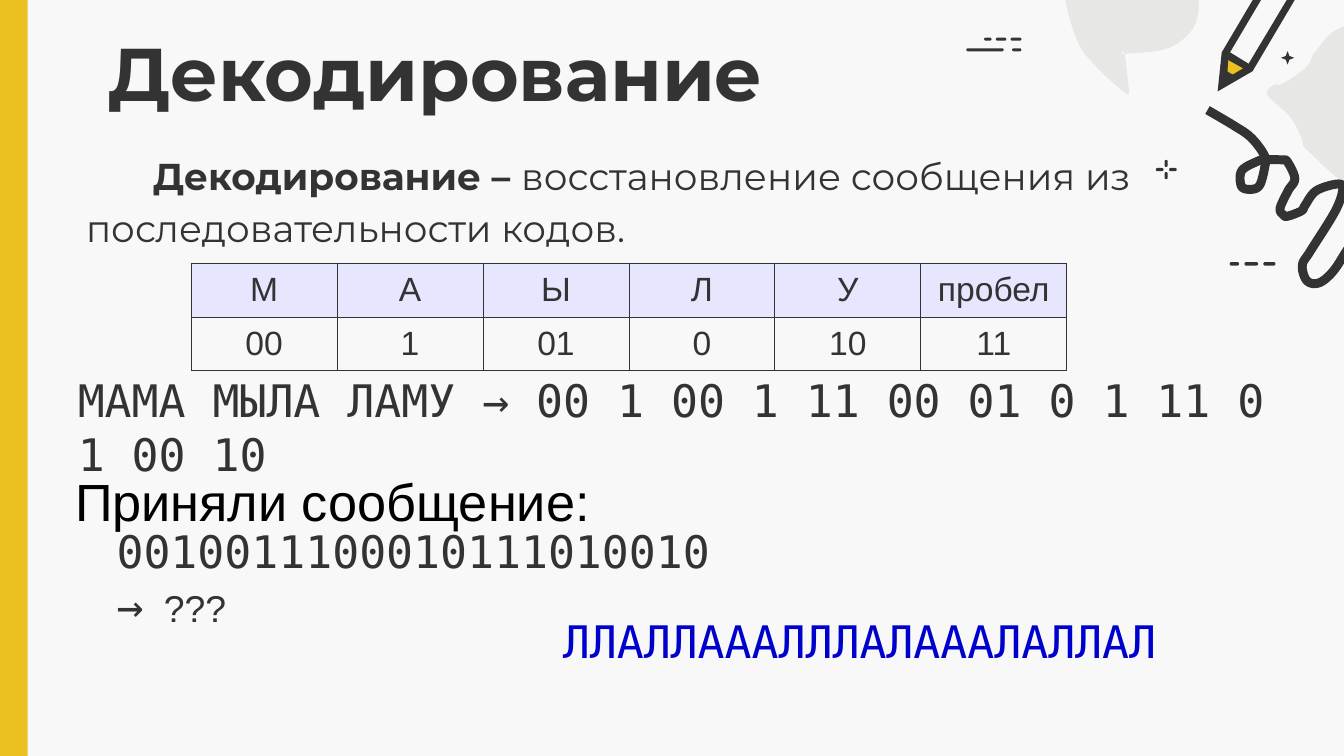
import pptx
import pptx.dml.color
import pptx.enum.shapes
import pptx.enum.text
import pptx.oxml
import pptx.oxml.ns
import pptx.util

Pt = pptx.util.Pt
COLORS = {
    "background": "F8F8F8",
    "yellow": "EBC122",
    "gray": "E7E7E5",
    "dark": "333333",
    "header": "E6E6FF",
    "blue": "0000CC",
    "black": "000000",
}
MONO = "DejaVu Sans Mono"
LEFT = pptx.enum.text.PP_ALIGN.LEFT
CENTER = pptx.enum.text.PP_ALIGN.CENTER
TOP = pptx.enum.text.MSO_ANCHOR.TOP
MIDDLE = pptx.enum.text.MSO_ANCHOR.MIDDLE
BOTTOM = pptx.enum.text.MSO_ANCHOR.BOTTOM

CODES = {"М": "00", "А": "1", "Ы": "01", "Л": "0", "У": "10", "пробел": "11"}
BUBBLE = [
    (596, -41), (590.4, -40), (578.9, -35), (570.2, -8.6), (576.7, 20.9),
    (588.2, 36.7), (602.6, 49.7), (604, 50.4), (604.8, 48.2), (602.6, 28.8),
    (602.6, 28.8), (625.7, 25.9), (640, 13.7), (642.2, -5.8), (640, -26.6), (625.7, -38.2),
]
BLOB = [
    (785.5, 32.4), (790.6, 69.1), (767.5, 98.6), (730.8, 103.7), (701.3, 81.4),
    (697.7, 74.9), (694.8, 68.4), (689.8, 61.2), (680.4, 52.6), (678.8, 49),
    (682.6, 45.4), (687.6, 44.6), (699.8, 36), (704.9, 27.4), (719.3, 14.4), (756, 9.4),
]
SQUIGGLE = [
    (646.9, 59), (661, 67.3), (670.3, 73.8), (677.5, 83.5), (677.5, 90),
    (674.6, 99.7), (668.9, 101.5), (664.9, 99.4), (665.3, 91.4), (673.9, 86.4),
    (677.5, 85.7), (686.9, 85.7), (689.8, 86.8), (693.7, 95.8), (690.1, 102.2),
    (685.8, 111.6), (687.6, 115.2), (689.8, 115.9), (697.3, 113), (699.1, 110.2),
    (705.2, 102.2), (717.1, 98.6), (719.3, 102.2), (715, 113.8), (702, 134.6),
    (697.7, 142.2), (700.2, 150.5), (706.7, 151.6), (714.2, 145.4), (721.5, 134.3),
    (733, 116.6), (745.2, 97.9),
]
PENCIL = [
    ("yellow", [[(669.6, 36), (656.6, 28.1), (654.5, 38.9), (659.5, 42.5)]]),
    ("background", [[(698.4, -13), (685.4, -20.2), (656.6, 28.1), (669.6, 36)]]),
    ("dark", [[(655.9, 37.4), (653.8, 41), (658.8, 43.9), (661, 40.3)]]),
    ("dark", [[(669.6, 34.6), (656.6, 26.6), (654.5, 30.2), (667.4, 37.4)]]),
    ("dark", [
        [(696.2, -11.5), (668.2, 35.3), (657.4, 41.8), (658.1, 29.5), (686.2, -18)],
        [(701.3, -13), (684.7, -23), (654.5, 28.1), (652.3, 49), (671, 38.2)],
    ]),
]
DASHES = [
    (619.2, 90, 4.1, 1.7), (626.3, 90, 4.1, 1.7),
    (623.9, 85.7, 1.7, 3.8), (623.9, 92.2, 1.7, 3.8),
    (517.7, 25.9, 20, 1.6), (542.2, 25.9, 5, 1.6),
    (527.2, 20.2, 4, 1.6), (533.5, 20.2, 5.6, 1.6), (541.4, 20.2, 5.8, 1.6),
    (658.8, 140.4, 5, 1.9), (666.7, 140.4, 7.3, 1.9), (676.8, 140.4, 6.5, 1.9),
]


def rgb(name):
    return pptx.dml.color.RGBColor.from_string(COLORS[name])


def paint(fill, color):
    fill.solid()
    fill.fore_color.rgb = rgb(color)


def place(shape, left, top, width, height):
    shape.left, shape.top, shape.width, shape.height = map(Pt, (left, top, width, height))


def smooth(points, closed, steps=6):
    if closed:
        padded = [points[-1], *points, *points[:2]]
    else:
        padded = [points[0], *points, points[-1]]
    curve = []
    for a, b, c, d in zip(padded, padded[1:], padded[2:], padded[3:]):
        for step in range(steps):
            t = step / steps
            curve.append(tuple(
                q + t / 2 * (r - p + t * (2 * p - 5 * q + 4 * r - s + t * (3 * (q - r) + s - p)))
                for p, q, r, s in zip(a, b, c, d)
            ))
    return curve if closed else curve + [points[-1]]


def add_outline(slide, contours, color, stroke=None):
    builder = None
    for contour in contours:
        (x, y), *rest = [(Pt(x), Pt(y)) for x, y in contour]
        if builder is None:
            builder = slide.shapes.build_freeform(x, y, scale=1.0)
        else:
            builder.move_to(x, y)
        builder.add_line_segments(rest, close=stroke is None)
    shape = builder.convert_to_shape()
    shape.shadow.inherit = False
    if stroke is None:
        paint(shape.fill, color)
        shape.line.fill.background()
    else:
        shape.fill.background()
        paint(shape.line.fill, color)
        shape.line.width = Pt(stroke)


def add_preset(slide, kind, box, color, adjustment=None):
    shape = slide.shapes.add_shape(
        getattr(pptx.enum.shapes.MSO_SHAPE, kind), *map(Pt, box))
    shape.shadow.inherit = False
    paint(shape.fill, color)
    shape.line.fill.background()
    if adjustment is not None:
        shape.adjustments[0] = adjustment


def add_run(paragraph, text, size, font, color="dark", bold=False):
    run = paragraph.add_run()
    run.text = text
    run.font.size = Pt(size)
    run.font.name = font
    run.font.bold = bold
    run.font.color.rgb = rgb(color)


def fill_placeholder(shape, box, anchor, runs):
    place(shape, *box)
    frame = shape.text_frame
    frame.auto_size = pptx.enum.text.MSO_AUTO_SIZE.NONE
    frame.vertical_anchor = anchor
    frame.margin_left = frame.margin_right = frame.margin_top = frame.margin_bottom = Pt(7.2)
    paragraph = frame.paragraphs[0]
    paragraph.alignment = LEFT
    paragraph.space_before = Pt(0)
    for text, size, bold in runs:
        add_run(paragraph, text, size, "Montserrat", bold=bold)
    return paragraph


def add_text(slide, box, lines, anchor=MIDDLE):
    frame = slide.shapes.add_textbox(*map(Pt, box)).text_frame
    frame.word_wrap = True
    frame.auto_size = pptx.enum.text.MSO_AUTO_SIZE.SHAPE_TO_FIT_TEXT
    frame.vertical_anchor = anchor
    paragraph = frame.paragraphs[0]
    for index, runs in enumerate(lines):
        if index:
            paragraph.add_line_break()
        for run in runs:
            add_run(paragraph, *run)


def add_borders(cell):
    properties = cell._tc.get_or_add_tcPr()
    for index, side in enumerate(("lnL", "lnR", "lnT", "lnB")):
        properties.insert(index, pptx.oxml.parse_xml(
            f'<a:{side} {pptx.oxml.ns.nsdecls("a")} w="{Pt(0.5)}"><a:solidFill>'
            f'<a:srgbClr val="{COLORS["dark"]}"/></a:solidFill></a:{side}>'))


def add_code_table(slide):
    rows = [list(CODES), list(CODES.values())]
    table = slide.shapes.add_table(
        2, len(CODES), Pt(102.4), Pt(141.1), Pt(469.2), Pt(57.6)).table
    for column in table.columns:
        column.width = Pt(78.2)
    for row_index, row in enumerate(rows):
        for column_index, text in enumerate(row):
            cell = table.cell(row_index, column_index)
            cell.vertical_anchor = MIDDLE
            paragraph = cell.text_frame.paragraphs[0]
            paragraph.alignment = CENTER
            add_run(paragraph, text, 18, "Arial")
            if row_index:
                cell.fill.background()
            else:
                paint(cell.fill, "header")
            add_borders(cell)


def add_decoration(slide):
    add_preset(slide, "RECTANGLE", (0, 0, 14.8, 405), "yellow")
    for points in (BLOB, BUBBLE):
        add_outline(slide, [smooth(points, closed=True)], "gray")
    for color, contours in PENCIL:
        add_outline(slide, contours, color)
    add_outline(slide, [smooth(SQUIGGLE, closed=False)], "dark", stroke=4.8)
    for box in DASHES:
        add_preset(slide, "ROUNDED_RECTANGLE", box, "dark", 0.5)
    add_preset(slide, "STAR_4_POINT", (686.2, 27.4, 7.2, 7.2), "dark", 0.19)


def main():
    presentation = pptx.Presentation()
    presentation.slide_width, presentation.slide_height = Pt(720), Pt(405)
    slide = presentation.slides.add_slide(presentation.slide_layouts[0])
    paint(slide.background.fill, "background")
    add_decoration(slide)
    fill_placeholder(slide.shapes.title, (51.1, 7.2, 607, 45.4), TOP,
                     [("Декодирование", 40, True)])
    definition = fill_placeholder(
        slide.placeholders[1], (38.9, 72.7, 575.3, 68.4), BOTTOM,
        [("Декодирование – ", 20, True),
         ("восстановление сообщения из последовательности кодов.", 20, False)])
    definition.line_spacing = 1.15
    definition._p.get_or_add_pPr().set("indent", str(Pt(36)))
    add_code_table(slide)
    add_text(slide, (34.6, 210.2, 659.5, 36.7),
             [[("МАМА МЫЛА ЛАМУ → 00 1 00 1 11 00 01 0 1 11 0 1 00 10", 24, MONO)]])
    add_text(slide, (55.4, 290.9, 393.8, 36.7),
             [[("0010011100010111010010", 24, MONO)],
              [("→", 24, MONO), (" ", 18, MONO), ("???", 20, "Arial")]])
    add_text(slide, (294.5, 324.7, 393.8, 36.7),
             [[("ЛЛАЛЛАААЛЛЛАЛАААЛАЛЛАЛ", 24, MONO, "blue")]])
    add_text(slide, (33.1, 247.7, 291.6, 41),
             [[("Приняли сообщение:", 28, "Arial", "black")]], TOP)
    presentation.save("out.pptx")


if __name__ == "__main__":
    main()
